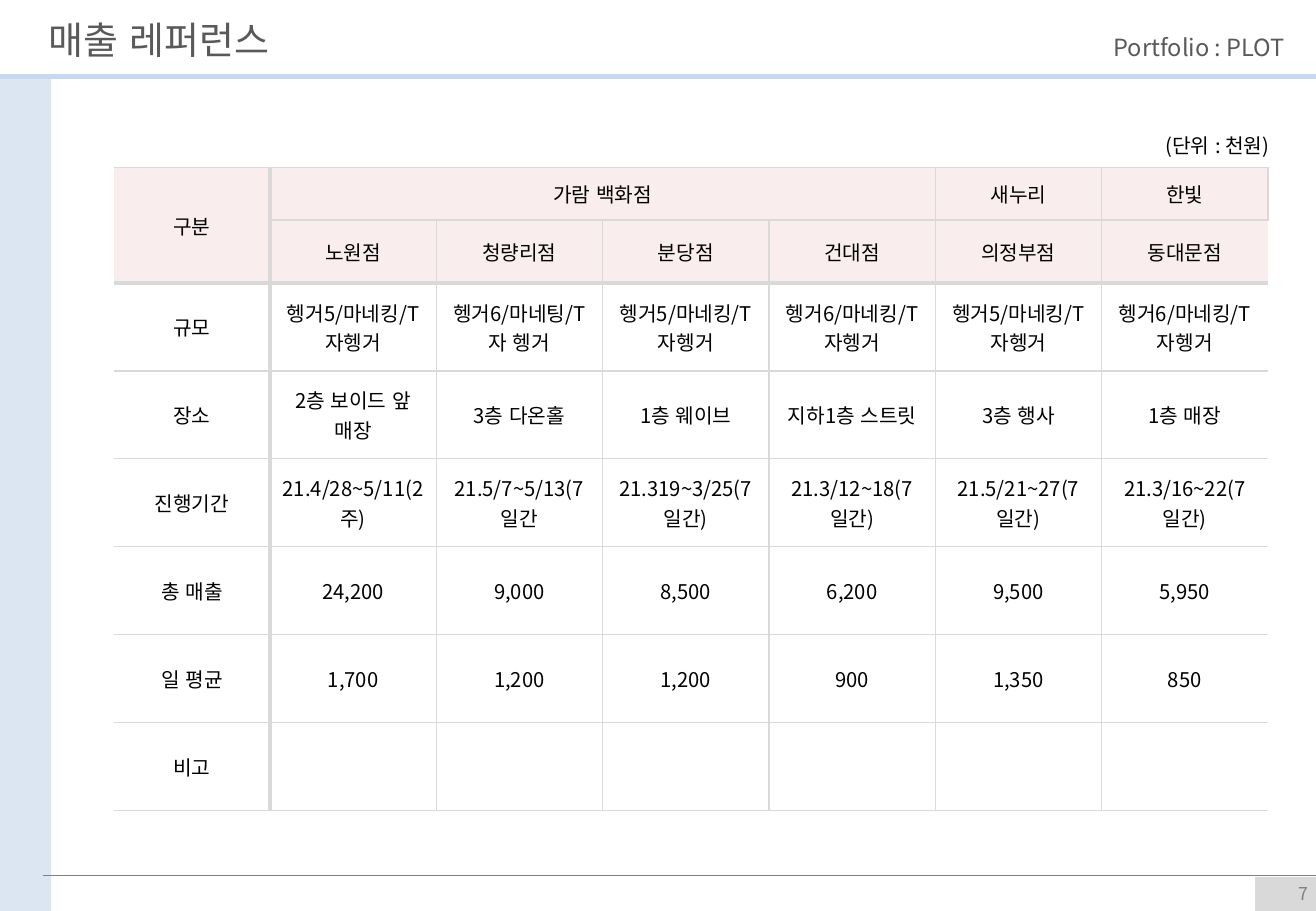
"""Builds the sales reference slide with its table of store results."""
from dataclasses import dataclass

from lxml import etree
from pptx import Presentation
from pptx import util as u
from pptx.dml.color import RGBColor
from pptx.enum import lang, shapes, text
from pptx.oxml import ns

FONT = "Noto Sans CJK KR"
BLACK = RGBColor(0x00, 0x00, 0x00)
WHITE = RGBColor(0xFF, 0xFF, 0xFF)
DARK_GRAY = RGBColor(0x59, 0x59, 0x59)
GRAY = RGBColor(0x80, 0x80, 0x80)
LIGHT_GRAY = RGBColor(0xD9, 0xD9, 0xD9)
PALE_BLUE = RGBColor(0xDC, 0xE6, 0xF2)
SKY_BLUE = RGBColor(0xC6, 0xD9, 0xF1)
PINK = RGBColor(0xF9, 0xEE, 0xED)

SLIDE_WIDTH, SLIDE_HEIGHT = 780, 540
HEADER_ROWS = 2
COLUMN_WIDTHS = [92.4] + [98.6] * 6
ROW_HEIGHTS = [31, 37.4] + [52.1] * 6
NO_GRID_STYLE = "{2D5ABB26-0587-4C30-8999-92F81FD0307C}"

STORES = [
    ["구분", "가람 백화점", "", "", "", "새누리", "한빛"],
    ["", "노원점", "청량리점", "분당점", "건대점", "의정부점", "동대문점"],
    ["규모", "헹거5/마네킹/T자헹거", "헹거6/마네팅/T자 헹거", "헹거5/마네킹/T자헹거",
     "헹거6/마네킹/T자헹거", "헹거5/마네킹/T자헹거", "헹거6/마네킹/T자헹거"],
    ["장소", "2층 보이드 앞 매장", "3층 다온홀", "1층 웨이브", "지하1층 스트릿",
     "3층 행사", "1층 매장"],
    ["진행기간", "21.4/28~5/11(2주)", "21.5/7~5/13(7일간", "21.319~3/25(7일간)",
     "21.3/12~18(7일간)", "21.5/21~27(7일간)", "21.3/16~22(7일간)"],
    ["총 매출", "24,200", "9,000", "8,500", "6,200", "9,500", "5,950"],
    ["일 평균", "1,700", "1,200", "1,200", "900", "1,350", "850"],
    ["비고", "", "", "", "", "", ""],
]


@dataclass
class Band:
    left: float
    top: float
    width: float
    height: float
    color: RGBColor


@dataclass
class Rule:
    left: float
    top: float
    color: RGBColor
    weight: float


@dataclass
class Label:
    wording: str
    left: float
    top: float
    width: float
    height: float
    size: float
    color: RGBColor
    side: float = 7.2
    edge: float = 3.6
    spacing: float = 1.0
    anchor: text.MSO_ANCHOR = text.MSO_ANCHOR.TOP


BANDS = [
    Band(744, 519.8, 36, 20.2, LIGHT_GRAY),
    Band(0, 45.2, 30.4, 494.8, PALE_BLUE),
]
RULES = [Rule(25.2, 519, GRAY, 0.75), Rule(0, 45.2, SKY_BLUE, 3)]
LABELS = [
    Label("Portfolio : PLOT", 426.2, 14.4, 342.7, 26, 14, DARK_GRAY, spacing=1.1),
    Label("7", 737.3, 519.8, 44, 19.4, 10.5, GRAY, 5.8, 2.9,
          anchor=text.MSO_ANCHOR.MIDDLE),
    Label("(단위 : 천원)", 649.4, 76.3, 108, 19.4, 12, BLACK, 5, 2.9),
]


def write(frame, wording: str, *, size: float, color: RGBColor,
          align=text.PP_ALIGN.LEFT, spacing: float = 1.0) -> None:
    paragraph = frame.paragraphs[0]
    paragraph.alignment = align
    paragraph.line_spacing = spacing
    run = paragraph.add_run()
    run.text = wording
    run.font.size = u.Pt(size)
    run.font.color.rgb = color
    run.font.name = FONT
    run.font.language_id = lang.MSO_LANGUAGE_ID.KOREAN
    etree.SubElement(run.font._element, ns.qn("a:ea"), typeface=FONT)


def place(shape, left: float, top: float, width: float, height: float) -> None:
    shape.left, shape.top = u.Pt(left), u.Pt(top)
    shape.width, shape.height = u.Pt(width), u.Pt(height)


def draw_band(slide, band: Band) -> None:
    strip = slide.shapes.add_shape(
        shapes.MSO_SHAPE.RECTANGLE, u.Pt(band.left), u.Pt(band.top),
        u.Pt(band.width), u.Pt(band.height))
    strip.shadow.inherit = False
    strip.fill.solid()
    strip.fill.fore_color.rgb = band.color
    strip.line.fill.background()


def draw_rule(slide, rule: Rule) -> None:
    stroke = slide.shapes.add_connector(
        shapes.MSO_CONNECTOR.STRAIGHT, u.Pt(rule.left), u.Pt(rule.top),
        u.Pt(SLIDE_WIDTH), u.Pt(rule.top))
    stroke.line.color.rgb = rule.color
    stroke.line.width = u.Pt(rule.weight)
    etree.SubElement(stroke._element.spPr, ns.qn("a:effectLst"))


def draw_label(slide, label: Label) -> None:
    caption = slide.shapes.add_textbox(
        u.Pt(label.left), u.Pt(label.top), u.Pt(label.width), u.Pt(label.height))
    frame = caption.text_frame
    frame.word_wrap = True
    frame.vertical_anchor = label.anchor
    frame.margin_left = frame.margin_right = u.Pt(label.side)
    frame.margin_top = frame.margin_bottom = u.Pt(label.edge)
    write(frame, label.wording, size=label.size, color=label.color,
          align=text.PP_ALIGN.RIGHT, spacing=label.spacing)


def draw_title(slide) -> None:
    heading = slide.shapes.title
    place(heading, 21.6, 6.5, 338.4, 34)
    heading.text_frame.vertical_anchor = text.MSO_ANCHOR.TOP
    heading.text_frame.auto_size = text.MSO_AUTO_SIZE.NONE
    write(heading.text_frame, "매출 레퍼런스", size=22.5, color=DARK_GRAY)


def add_border(cell, side: str, weight: float) -> None:
    border = etree.SubElement(cell._tc.get_or_add_tcPr(), ns.qn(f"a:ln{side}"),
                              w=str(u.Pt(weight)))
    paint = etree.SubElement(border, ns.qn("a:solidFill"))
    etree.SubElement(paint, ns.qn("a:srgbClr"), val=str(LIGHT_GRAY))


def column_weight(boundary: int) -> float:
    if boundary in (0, len(COLUMN_WIDTHS)):
        return 0
    return 2.25 if boundary == 1 else 1


def row_weight(boundary: int) -> float:
    if boundary == HEADER_ROWS:
        return 2.25
    return 0.75 if boundary >= len(ROW_HEIGHTS) - 1 else 1


def format_cell(cell, row: int, column: int) -> None:
    if not cell.is_spanned:
        right = column + (cell.span_width if cell.is_merge_origin else 1)
        bottom = row + (cell.span_height if cell.is_merge_origin else 1)
        weights = {"L": column_weight(column), "R": column_weight(right),
                   "T": row_weight(row), "B": row_weight(bottom)}
        for side, weight in weights.items():
            if weight:
                add_border(cell, side, weight)
    cell.fill.solid()
    cell.fill.fore_color.rgb = PINK if row < HEADER_ROWS else WHITE
    cell.vertical_anchor = text.MSO_ANCHOR.MIDDLE
    if STORES[row][column]:
        write(cell.text_frame, STORES[row][column], size=12, color=BLACK,
              align=text.PP_ALIGN.CENTER)


def draw_sales(slide) -> None:
    sales = slide.shapes.add_table(
        len(ROW_HEIGHTS), len(COLUMN_WIDTHS), u.Pt(67.6), u.Pt(99.4),
        u.Pt(sum(COLUMN_WIDTHS)), u.Pt(sum(ROW_HEIGHTS))).table
    sales.first_row = sales.horz_banding = False
    sales._tbl.tblPr.find(ns.qn("a:tableStyleId")).text = NO_GRID_STYLE
    for column, width in zip(sales.columns, COLUMN_WIDTHS):
        column.width = u.Pt(width)
    for row, height in zip(sales.rows, ROW_HEIGHTS):
        row.height = u.Pt(height)
    sales.cell(0, 0).merge(sales.cell(1, 0))
    sales.cell(0, 1).merge(sales.cell(0, 4))
    for row in range(len(ROW_HEIGHTS)):
        for column in range(len(COLUMN_WIDTHS)):
            format_cell(sales.cell(row, column), row, column)


def main() -> None:
    deck = Presentation()
    deck.slide_width, deck.slide_height = u.Pt(SLIDE_WIDTH), u.Pt(SLIDE_HEIGHT)
    slide = deck.slides.add_slide(deck.slide_layouts.get_by_name("Title Only"))
    draw_title(slide)
    for band in BANDS:
        draw_band(slide, band)
    for rule in RULES:
        draw_rule(slide, rule)
    for label in LABELS:
        draw_label(slide, label)
    draw_sales(slide)
    deck.save("out.pptx")


if __name__ == "__main__":
    main()
